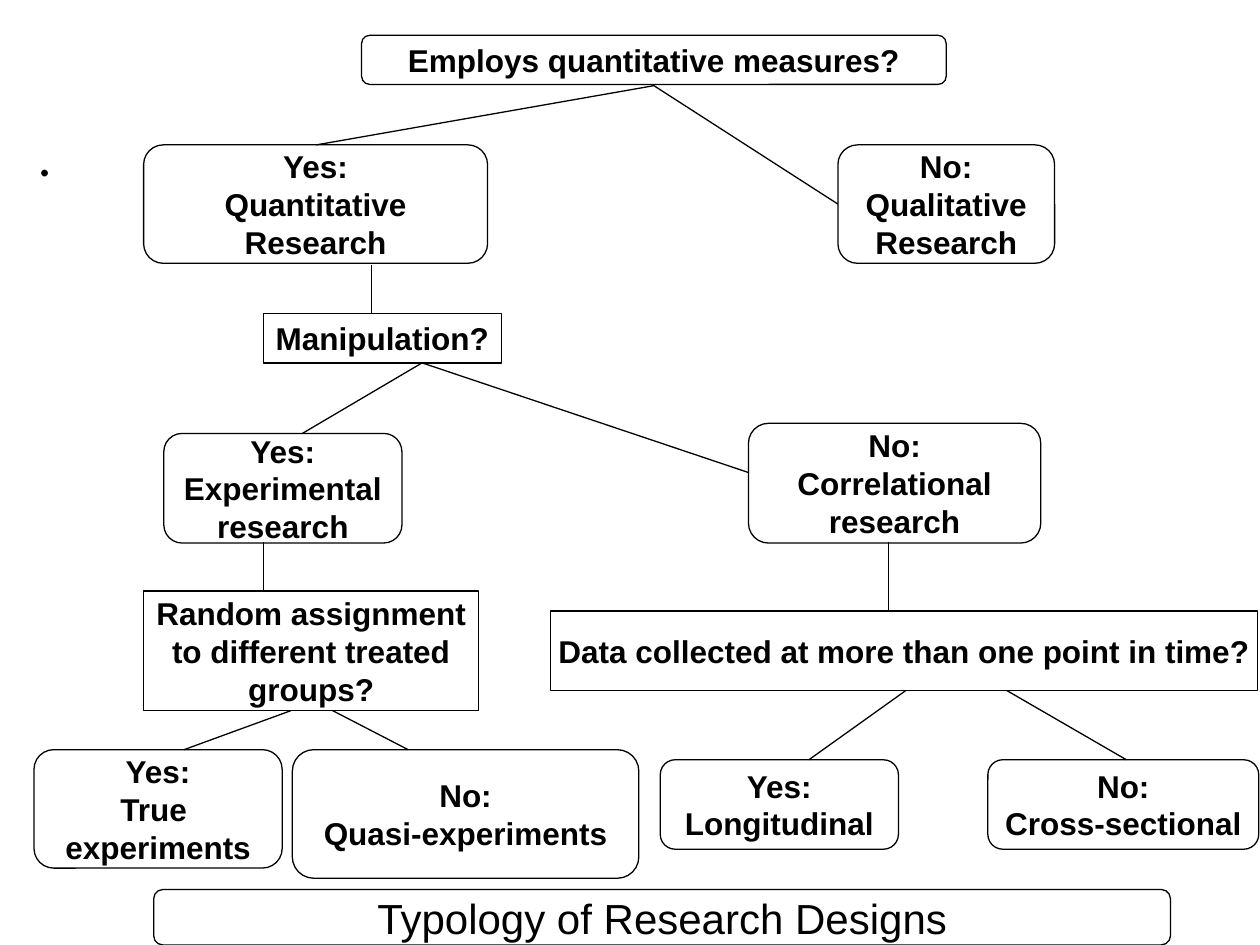
from pptx import Presentation
from pptx.dml.color import RGBColor
from pptx.enum.shapes import MSO_CONNECTOR as Link, MSO_SHAPE as Shape
from pptx.enum.text import MSO_ANCHOR as Anchor, PP_ALIGN as Align
from pptx.oxml.ns import qn
from pptx.util import Inches, Pt
from lxml.etree import SubElement

# kind of box, left, top, width, height, text
NODES = [
    ("round", 2.87, 0.28, 4.64, 0.39, "Employs quantitative measures?"),
    ("round", 1.14, 1.15, 2.73, 0.94, "Yes:\nQuantitative\nResearch"),
    ("round", 6.65, 1.15, 1.72, 0.94, "No:\nQualitative\nResearch"),
    ("rect", 2.09, 2.49, 1.89, 0.39, "Manipulation?"),
    ("round", 1.3, 3.44, 1.89, 0.87, "Yes:\nExperimental\nresearch"),
    ("round", 5.94, 3.36, 2.32, 0.95, "No:\nCorrelational\nresearch"),
    ("rect", 1.14, 4.69, 2.66, 0.95,
     "Random assignment\nto different treated\ngroups?"),
    ("round", 0.27, 5.95, 1.97, 0.94, "Yes:\nTrue \nexperiments"),
    ("round", 2.32, 5.95, 2.75, 1.02, "No:\nQuasi-experiments"),
    ("rect", 4.37, 4.85, 5.61, 0.63,
     "Data collected at more than one point in time?"),
    ("round", 5.24, 6.03, 1.89, 0.71, "Yes:\nLongitudinal"),
    ("round", 7.84, 6.03, 2.15, 0.71, "No:\nCross-sectional"),
]

# start x, start y, end x, end y
LINKS = [
    (5.19, 0.68, 2.51, 1.15),
    (5.19, 0.68, 6.65, 1.62),
    (2.95, 2.1, 2.95, 2.49),
    (3.35, 2.88, 2.4, 3.44),
    (3.35, 2.88, 5.94, 3.75),
    (2.09, 4.3, 2.09, 4.69),
    (2.31, 5.64, 1.46, 5.95),
    (2.64, 5.64, 3.24, 5.95),
    (7.05, 4.3, 7.05, 4.85),
    (7.19, 5.48, 6.42, 6.03),
    (7.99, 5.48, 8.94, 6.03),
]


def color(code):
    return RGBColor.from_string(code)


class Chart:
    """Flow chart style and the slide it is drawn on."""
    ink = "000000"
    paper = "FFFFFF"
    font = "Arial"
    line = Pt(0.75)
    kinds = {"round": Shape.ROUNDED_RECTANGLE, "rect": Shape.RECTANGLE}

    def __init__(self, slide):
        self.shapes = slide.shapes

    def label(self, frame, text, size, font, bold, align):
        frame.text = text
        for para in frame.paragraphs:
            para.alignment = align
            for run in para.runs:
                run.font.size = Pt(size)
                run.font.name = font
                run.font.bold = bold
                run.font.color.rgb = color(self.ink)

    def box(self, kind, x, y, w, h, text, size=18, bold=True):
        box = self.shapes.add_shape(
            self.kinds[kind], Inches(x), Inches(y), Inches(w), Inches(h))
        box.shadow.inherit = False
        box.fill.solid()
        box.fill.fore_color.rgb = color(self.paper)
        box.line.color.rgb = color(self.ink)
        box.line.width = self.line
        frame = box.text_frame
        frame.word_wrap = False
        frame.vertical_anchor = Anchor.MIDDLE
        self.label(frame, text, size, self.font, bold, Align.CENTER)

    def note(self, x, y, w, h, text, size, font):
        note = self.shapes.add_textbox(
            Inches(x), Inches(y), Inches(w), Inches(h))
        note.text_frame.word_wrap = True
        self.label(note.text_frame, text, size, font, False, Align.LEFT)

    def link(self, x1, y1, x2, y2):
        link = self.shapes.add_connector(
            Link.STRAIGHT, Inches(x1), Inches(y1), Inches(x2), Inches(y2))
        link.line.color.rgb = color(self.ink)
        link.line.width = self.line
        SubElement(link._element.spPr, qn("a:effectLst"))


def main():
    deck = Presentation()
    deck.slide_width, deck.slide_height = Inches(10), Inches(7.5)
    chart = Chart(deck.slides.add_slide(deck.slide_layouts[6]))
    chart.note(0.2, 0.91, 9.61, 6.59, ".", 32, "Calibri")
    for node in NODES:
        chart.box(*node)
    for ends in LINKS:
        chart.link(*ends)
    chart.box("round", 1.22, 7.06, 8.07, 0.44,
              "Typology of Research Designs", size=24, bold=False)
    deck.save("out.pptx")


if __name__ == "__main__":
    main()
